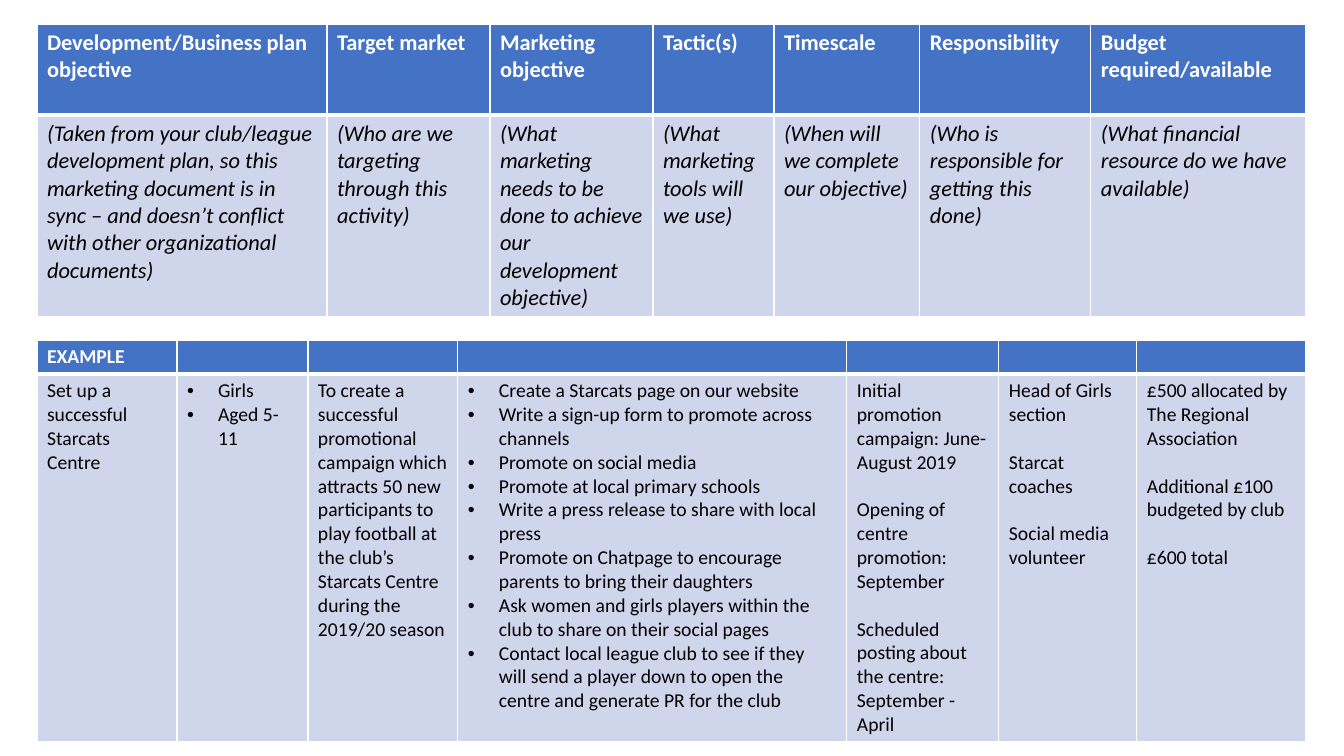
from lxml.etree import SubElement
from pptx import Presentation
from pptx.dml.color import RGBColor
from pptx.oxml.ns import qn
from pptx.util import Pt

EMU_PER_PX = 914400 / 100.8
COLORS = {"header": "4472C4", "body": "CFD5EA", "border": "FFFFFF",
          "header_text": "FFFFFF", "body_text": "000000"}
HEADER_FONT = {"name": "Calibri", "bold": True}
PROMPT_FONT = {"name": "Calibri", "bold": False, "italic": True}
EXAMPLE_FONT = {"name": "Calibri", "bold": False}
BULLET_INDENT = 31
LINE_GAP = 17

PLAN_COLUMNS = [290, 163, 163, 121, 146, 171, 215]
PLAN_HEADINGS = ["Development/Business plan objective", "Target market",
                 "Marketing objective", "Tactic(s)", "Timescale",
                 "Responsibility", "Budget required/available"]
PLAN_PROMPTS = [
    "(Taken from your club/league development plan, so this marketing document "
    "is in sync – and doesn’t conflict with other organizational documents)",
    "(Who are we targeting through this activity)",
    "(What marketing needs to be done to achieve our development objective)",
    "(What marketing tools will we use)",
    "(When will we complete our objective)",
    "(Who is responsible for getting this done)",
    "(What financial resource do we have available)",
]

EXAMPLE_COLUMNS = [140, 131, 150, 389, 152, 138, 169]
EXAMPLE_HEADINGS = ["EXAMPLE"] + [""] * 6
EXAMPLE_BULLETED = {1, 3}
EXAMPLE_ENTRIES = [
    ["Set up a successful Starcats Centre"],
    ["Girls", "Aged 5-11"],
    ["To create a successful promotional campaign which attracts 50 new "
     "participants to play football at the club’s Starcats Centre during the "
     "2019/20 season"],
    ["Create a Starcats page on our website",
     "Write a sign-up form to promote across channels",
     "Promote on social media",
     "Promote at local primary schools",
     "Write a press release to share with local press",
     "Promote on Chatpage to encourage parents to bring their daughters",
     "Ask women and girls players within the club to share on their social pages",
     "Contact local league club to see if they will send a player down to open "
     "the centre and generate PR for the club"],
    ["Initial promotion campaign: June-August 2019",
     "Opening of centre promotion: September",
     "Scheduled posting about the centre: September - April"],
    ["Head of Girls section", "Starcat coaches", "Social media volunteer"],
    ["£500 allocated by The Regional Association",
     "Additional £100 budgeted by club", "£600 total"],
]


def px(length):
    """Turn pixels into EMU."""
    return round(length * EMU_PER_PX)


def add_borders(cell, widths):
    """Draw the cell borders with a width in points for each side."""
    properties = cell._tc.get_or_add_tcPr()
    for side, width in widths.items():
        line = SubElement(properties, qn(f"a:ln{side}"), w=str(Pt(width)))
        fill = SubElement(line, qn("a:solidFill"))
        SubElement(fill, qn("a:srgbClr"), val=COLORS["border"])


def add_bullet(paragraph):
    """Give a paragraph a round bullet with a hanging indent."""
    properties = paragraph._p.get_or_add_pPr()
    properties.set("marL", str(px(BULLET_INDENT)))
    properties.set("indent", str(-px(BULLET_INDENT)))
    SubElement(properties, qn("a:buFont"), typeface="Arial")
    SubElement(properties, qn("a:buChar"), char="•")


def write_paragraph(paragraph, text, size, font_format, color):
    """Write one formatted run, or only the line size when there is no text."""
    if not text:
        SubElement(paragraph._p, qn("a:endParaRPr"), sz=str(size * 100))
        return
    run = paragraph.add_run()
    run.text = text
    for attribute, value in {**font_format, "size": Pt(size)}.items():
        setattr(run.font, attribute, value)
    run.font.color.rgb = RGBColor.from_string(COLORS[color])


def fill_cell(cell, entries, size, font_format, part, bulleted=False):
    """Fill a header or body cell with its borders, colour and paragraphs."""
    heavy_side = "B" if part == "header" else "T"
    add_borders(cell, {side: 3 if side == heavy_side else 1 for side in "LRTB"})
    cell.fill.solid()
    cell.fill.fore_color.rgb = RGBColor.from_string(COLORS[part])
    frame = cell.text_frame
    for index, entry in enumerate(entries):
        paragraph = frame.add_paragraph() if index else frame.paragraphs[0]
        if bulleted:
            add_bullet(paragraph)
        elif index:
            paragraph.space_before = Pt(LINE_GAP)
        write_paragraph(paragraph, entry, size, font_format, f"{part}_text")


def add_plan_table(slide, top, columns, rows, headings, entries, size,
                   body_font, bulleted=()):
    """Add a table with one header row and one body row."""
    table = slide.shapes.add_table(2, len(columns), px(37), px(top),
                                   px(sum(columns)), px(sum(rows))).table
    for row, height in zip(table.rows, rows):
        row.height = px(height)
    for index, width in enumerate(columns):
        table.columns[index].width = px(width)
        fill_cell(table.cell(0, index), [headings[index]], size,
                  HEADER_FONT, "header")
        fill_cell(table.cell(1, index), entries[index], size,
                  body_font, "body", index in bulleted)


def main():
    """Build the marketing plan slide."""
    deck = Presentation()
    deck.slide_width, deck.slide_height = px(1344), px(756)
    slide = deck.slides.add_slide(deck.slide_layouts[6])
    add_plan_table(slide, 24, PLAN_COLUMNS, [91, 200], PLAN_HEADINGS,
                   [[prompt] for prompt in PLAN_PROMPTS], 16, PROMPT_FONT)
    add_plan_table(slide, 340, EXAMPLE_COLUMNS, [33, 367], EXAMPLE_HEADINGS,
                   EXAMPLE_ENTRIES, 14, EXAMPLE_FONT, EXAMPLE_BULLETED)
    deck.save("out.pptx")


if __name__ == "__main__":
    main()
